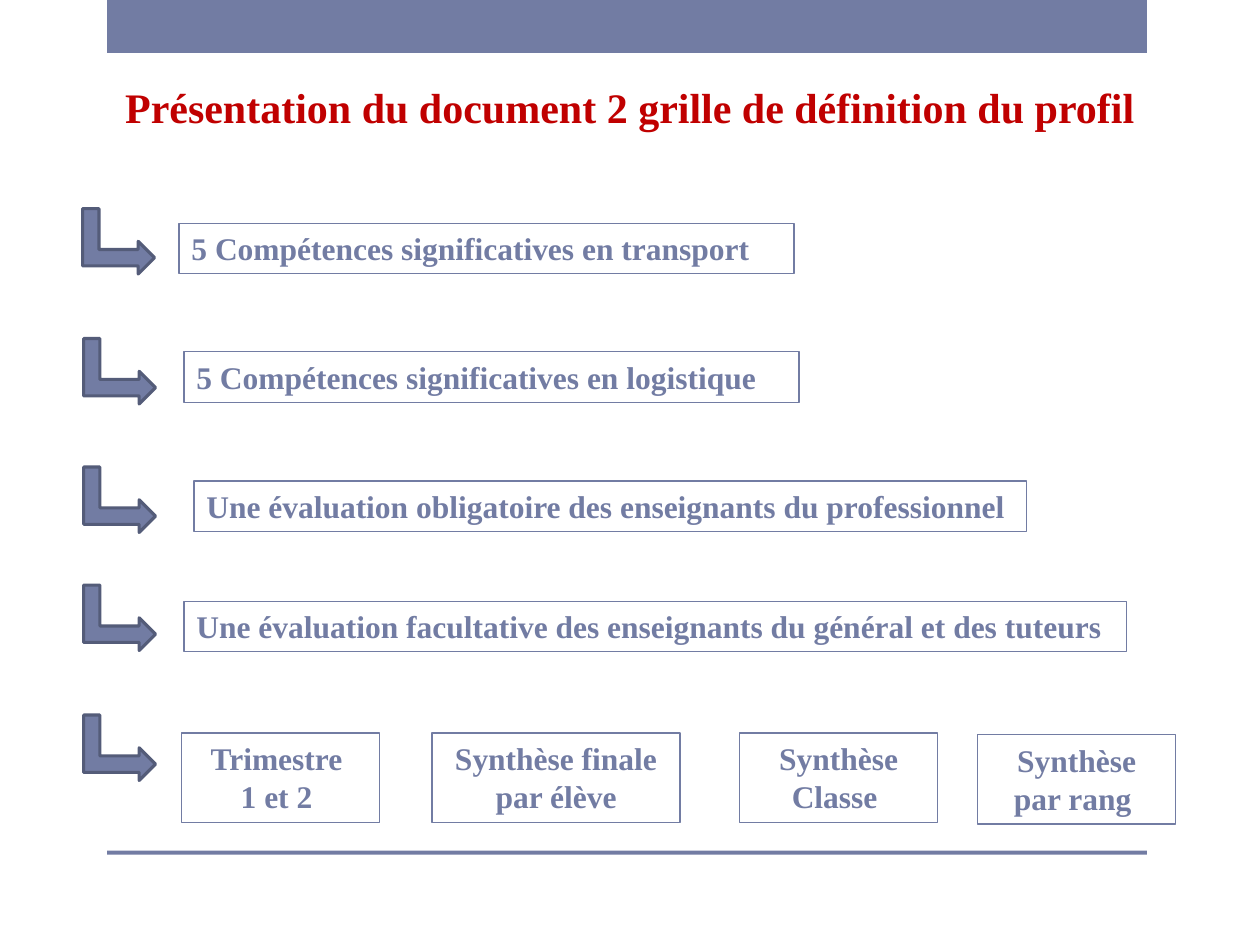
from pptx import Presentation
from pptx.dml.color import RGBColor
from pptx.enum import shapes, text
from pptx.util import Cm, Pt

COLORS = {"slate": "727CA3", "edge": "545C79", "red": "C00000"}
FONT = "Times New Roman"

TITLE = "Présentation du document 2 grille de définition du profil"

# text, left, top, width (cm)
CRITERIA = [
    ("5 Compétences significatives en transport", 3.61, 4.5, 12.4),
    ("5 Compétences significatives en logistique", 3.71, 7.09, 12.4),
    ("Une évaluation obligatoire des enseignants du professionnel", 3.91, 9.7, 16.79),
    ("Une évaluation facultative des enseignants du général et des tuteurs", 3.71, 12.12, 19),
]
# paragraphs, left, top, width (cm)
SUMMARIES = [
    (["Trimestre ", "1 et 2 "], 3.66, 14.78, 3.99),
    (["Synthèse finale par élève"], 8.71, 14.78, 5),
    (["Synthèse", "Classe "], 14.91, 14.78, 3.99),
    (["Synthèse", "par rang "], 19.71, 14.81, 3.99),
]
# left, top (cm)
ARROWS = [(1.73, 4.14), (1.75, 6.76), (1.75, 9.35), (1.75, 11.73), (1.75, 14.35)]
# top, height (cm)
BANDS = [(0, 1.07), (17.15, 0.08)]


def rgb(name):
    return RGBColor.from_string(COLORS[name])


def add_shape(slide, kind, left, top, width, height, fill=None, line=None, weight=0.75):
    sp = slide.shapes.add_shape(kind, Cm(left), Cm(top), Cm(width), Cm(height))
    sp.shadow.inherit = False
    if fill:
        sp.fill.solid()
        sp.fill.fore_color.rgb = rgb(fill)
    else:
        sp.fill.background()
    if line:
        sp.line.color.rgb = rgb(line)
        sp.line.width = Pt(weight)
    else:
        sp.line.fill.background()
    return sp


def write(sp, lines, size, color, align):
    tf = sp.text_frame
    tf.word_wrap = True
    tf.vertical_anchor = text.MSO_ANCHOR.TOP
    for i, line in enumerate(lines):
        p = tf.add_paragraph() if i else tf.paragraphs[0]
        p.alignment = align
        r = p.add_run()
        r.text = line
        r.font.name = FONT
        r.font.size = Pt(size)
        r.font.bold = True
        r.font.color.rgb = rgb(color)


def main():
    prs = Presentation()
    prs.slide_width, prs.slide_height = Cm(25.4), Cm(19.05)
    s = prs.slides.add_slide(prs.slide_layouts[6])
    rect = shapes.MSO_SHAPE.RECTANGLE
    left, center = text.PP_ALIGN.LEFT, text.PP_ALIGN.CENTER

    for top, height in BANDS:
        add_shape(s, rect, 2.16, top, 20.96, height, fill="slate")

    title = s.shapes.add_textbox(Cm(1.7), Cm(1.52), Cm(22), Cm(1.27))
    write(title, [TITLE], 24, "red", center)

    for x, y in ARROWS:
        arrow = add_shape(s, shapes.MSO_SHAPE.BENT_UP_ARROW, x, y, 1.32, 1.45,
                          "slate", "edge", 1.75)
        arrow.rotation = 90

    for label, x, y, width in CRITERIA:
        box = add_shape(s, rect, x, y, width, 1.02, line="slate")
        write(box, [label], 18, "slate", left)

    for lines, x, y, width in SUMMARIES:
        box = add_shape(s, rect, x, y, width, 1.8, line="slate")
        write(box, lines, 18, "slate", center)

    prs.save("out.pptx")


if __name__ == "__main__":
    main()
